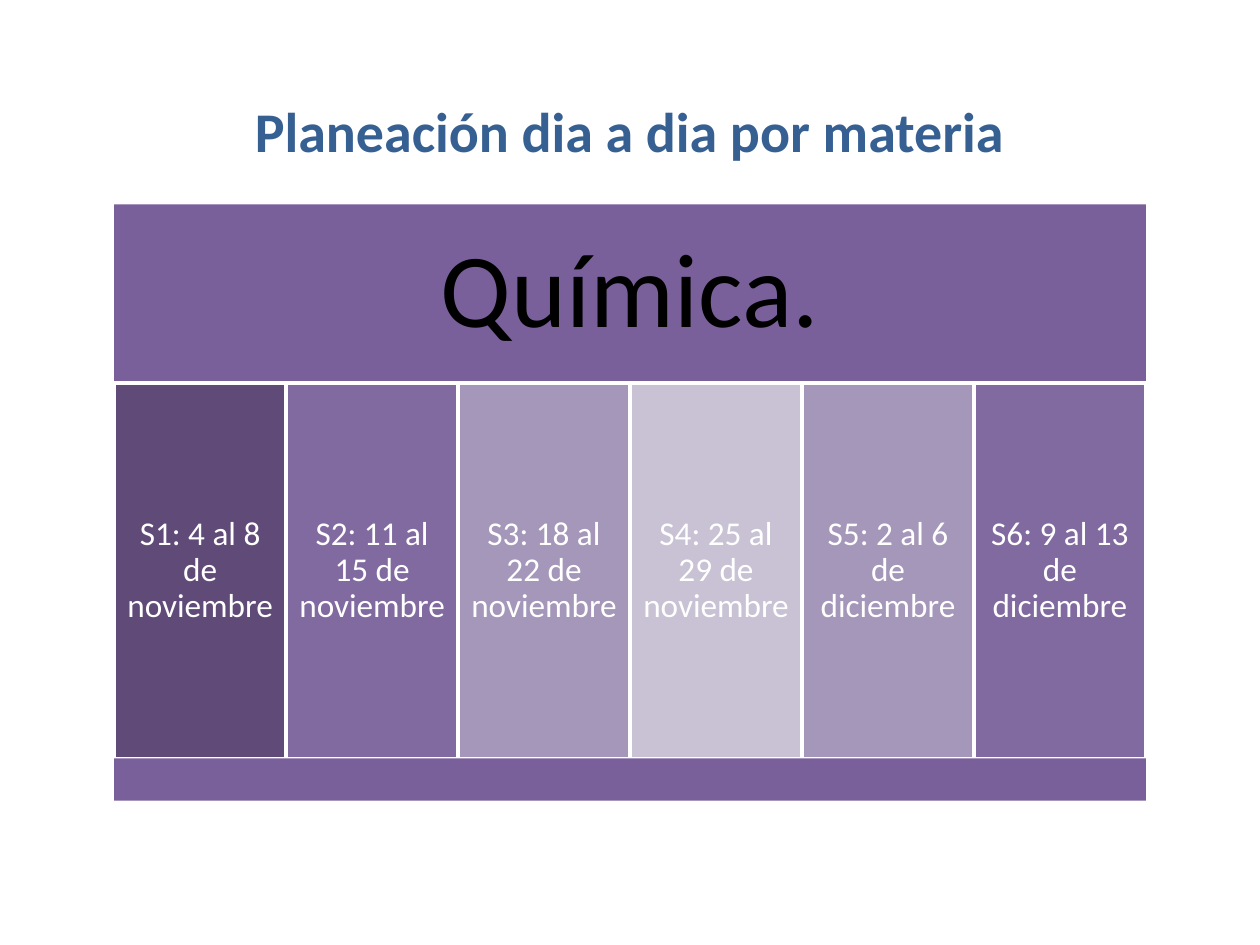
from pptx import Presentation
from pptx.dml.color import RGBColor
from pptx.enum.shapes import MSO_SHAPE
from pptx.enum.text import MSO_ANCHOR, PP_ALIGN
from pptx.util import Cm, Pt


def color(hex_string):
    return RGBColor.from_string(hex_string)


def add_block(kind, left, top, width, height, fill, text="", size=18,
              text_color="FFFFFF", inset=0.2, line_spacing=0.9):
    """Add a filled block without outline; lengths are in centimetres."""
    shape = slide.shapes.add_shape(kind, Cm(left), Cm(top), Cm(width), Cm(height))
    shape.shadow.inherit = False
    shape.fill.solid()
    shape.fill.fore_color.rgb = color(fill)
    shape.line.fill.background()
    if text:
        frame = shape.text_frame
        frame.word_wrap = True
        frame.vertical_anchor = MSO_ANCHOR.MIDDLE
        frame.margin_left = frame.margin_right = Cm(inset)
        frame.margin_top = frame.margin_bottom = Cm(inset)
        paragraph = frame.paragraphs[0]
        paragraph.text = text
        paragraph.alignment = PP_ALIGN.CENTER
        paragraph.line_spacing = line_spacing
        paragraph.font.name = "Calibri"
        paragraph.font.size = Pt(size)
        paragraph.font.color.rgb = color(text_color)
    return shape


presentation = Presentation()
presentation.slide_width = Cm(25.4)
presentation.slide_height = Cm(19.05)
slide = presentation.slides.add_slide(presentation.slide_layouts[6])

LEFT, WIDTH = 2.3, 20.8
HEADER_TOP, HEADER_HEIGHT = 4.12, 3.6
WEEKS_TOP, WEEKS_HEIGHT = HEADER_TOP + HEADER_HEIGHT, 7.57
FOOTER_TOP = WEEKS_TOP + WEEKS_HEIGHT

title = add_block(MSO_SHAPE.ROUNDED_RECTANGLE, LEFT, 1.73, WIDTH, 1.8, "FFFFFF",
                  "Planeación dia a dia por materia", 32, "376092", line_spacing=1.0)
title.text_frame.paragraphs[0].font.bold = True

add_block(MSO_SHAPE.RECTANGLE, LEFT, HEADER_TOP, WIDTH, HEADER_HEIGHT, "7A609B",
          "Química.", 60, "000000", inset=0.64)

weeks = [
    ("S1: 4 al 8 de noviembre", "5F4A78"),
    ("S2: 11 al 15 de noviembre", "816A9F"),
    ("S3: 18 al 22 de noviembre", "A597B9"),
    ("S4: 25 al 29 de noviembre", "C9C2D4"),
    ("S5: 2 al 6 de diciembre", "A597B9"),
    ("S6: 9 al 13 de diciembre", "816A9F"),
]
week_width = WIDTH / len(weeks)
for index, (dates, fill) in enumerate(weeks):
    week = add_block(MSO_SHAPE.RECTANGLE, LEFT + index * week_width, WEEKS_TOP,
                     week_width, WEEKS_HEIGHT, fill, dates, 19)
    week.line.color.rgb = color("FFFFFF")
    week.line.width = Pt(2)

add_block(MSO_SHAPE.RECTANGLE, LEFT, FOOTER_TOP, WIDTH, 0.85, "7A609B")

presentation.save("out.pptx")
